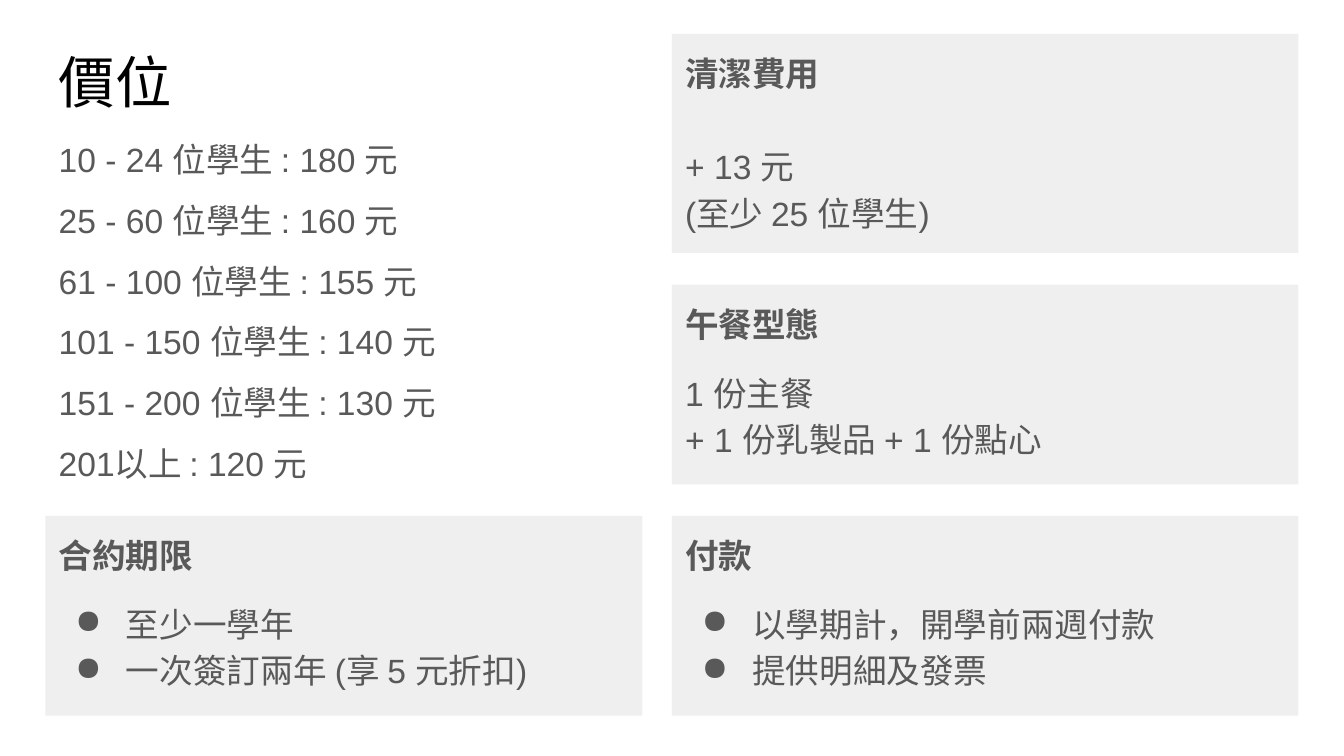
from lxml.etree import SubElement
from pptx import Presentation
from pptx.dml.color import RGBColor
from pptx.enum.shapes import MSO_SHAPE
from pptx.enum.text import MSO_ANCHOR, PP_ALIGN
from pptx.oxml.ns import qn
from pptx.util import Cm, Pt

# Content
TITLE = "價位"
PRICES = [
    "10 - 24 位學生 : 180 元",
    "25 - 60 位學生 : 160 元",
    "61 - 100 位學生 : 155 元",
    "101 - 150 位學生 : 140 元",
    "151 - 200 位學生 : 130 元",
    "201以上 : 120 元",
]
LEFT, RIGHT = (0.86, 11.28), (12.7, 11.84)  # column left, width
BOTTOM_ROW = (9.75, 3.78)  # row top, height
# column, row, heading, body paragraphs, bulleted, gap after heading
CARDS = [
    (RIGHT, (0.64, 4.14), "清潔費用", ["+ 13 元\n(至少 25 位學生)"], False, 25),
    (RIGHT, (5.38, 3.78), "午餐型態", ["1 份主餐\n+ 1 份乳製品 + 1 份點心"], False, 12),
    (LEFT, BOTTOM_ROW, "合約期限", ["至少一學年", "一次簽訂兩年 (享 5 元折扣)"], True, 12),
    (RIGHT, BOTTOM_ROW, "付款", ["以學期計，開學前兩週付款", "提供明細及發票"], True, 12),
]
GREY, CARD_FILL, BLACK = "595959", "EFEFEF", "000000"


def color(value):
    return RGBColor.from_string(value)


def set_all(obj, formats):
    for name, value in formats.items():
        setattr(obj, name, value)


def set_frame(s):
    tf = s.text_frame
    inset = Cm(0.25)
    set_all(tf, {"word_wrap": True, "vertical_anchor": MSO_ANCHOR.TOP,
                 "margin_left": inset, "margin_right": inset,
                 "margin_top": inset, "margin_bottom": inset})
    return tf


def add_bullet(p):
    pPr = p._p.get_or_add_pPr()
    pPr.set("marL", str(Cm(1.27)))
    pPr.set("indent", str(Cm(-0.96)))
    clr = SubElement(pPr, qn("a:buClr"))
    SubElement(clr, qn("a:srgbClr")).set("val", GREY)
    SubElement(pPr, qn("a:buChar")).set("char", "●")


def write(tf, index, text, size=18, ink=GREY, bold=False, bullet=False,
          spacing=1.0, before=0):
    p = tf.add_paragraph() if index else tf.paragraphs[0]
    if bullet:
        add_bullet(p)
    p.text = text
    set_all(p, {"alignment": PP_ALIGN.LEFT, "line_spacing": spacing,
                "space_before": Pt(before)})
    for r in p.runs:
        set_all(r.font, {"name": "Arial", "size": Pt(size), "bold": bold})
        r.font.color.rgb = color(ink)


prs = Presentation()
prs.slide_width, prs.slide_height = Cm(25.4), Cm(14.29)
slide = prs.slides.add_slide(prs.slide_layouts[6])

# Title
s = slide.shapes.add_textbox(Cm(0.86), Cm(0.64), Cm(23.67), Cm(1.6))
write(set_frame(s), 0, TITLE, size=30.2, ink=BLACK)

# Price list
s = slide.shapes.add_textbox(Cm(0.86), Cm(2.44), Cm(8.61), Cm(7.11))
tf = set_frame(s)
for i, line in enumerate(PRICES):
    write(tf, i, line, spacing=0.95, before=12 if i else 0)

# Cards
for (left, width), (top, height), heading, body, bulleted, gap in CARDS:
    s = slide.shapes.add_shape(MSO_SHAPE.RECTANGLE, Cm(left), Cm(top), Cm(width), Cm(height))
    s.shadow.inherit = False
    s.fill.solid()
    s.fill.fore_color.rgb = color(CARD_FILL)
    s.line.fill.background()
    tf = set_frame(s)
    write(tf, 0, heading, bold=True, spacing=1.15)
    for i, line in enumerate(body, 1):
        write(tf, i, line, bullet=bulleted, spacing=1.15, before=gap if i == 1 else 0)

prs.save("out.pptx")
